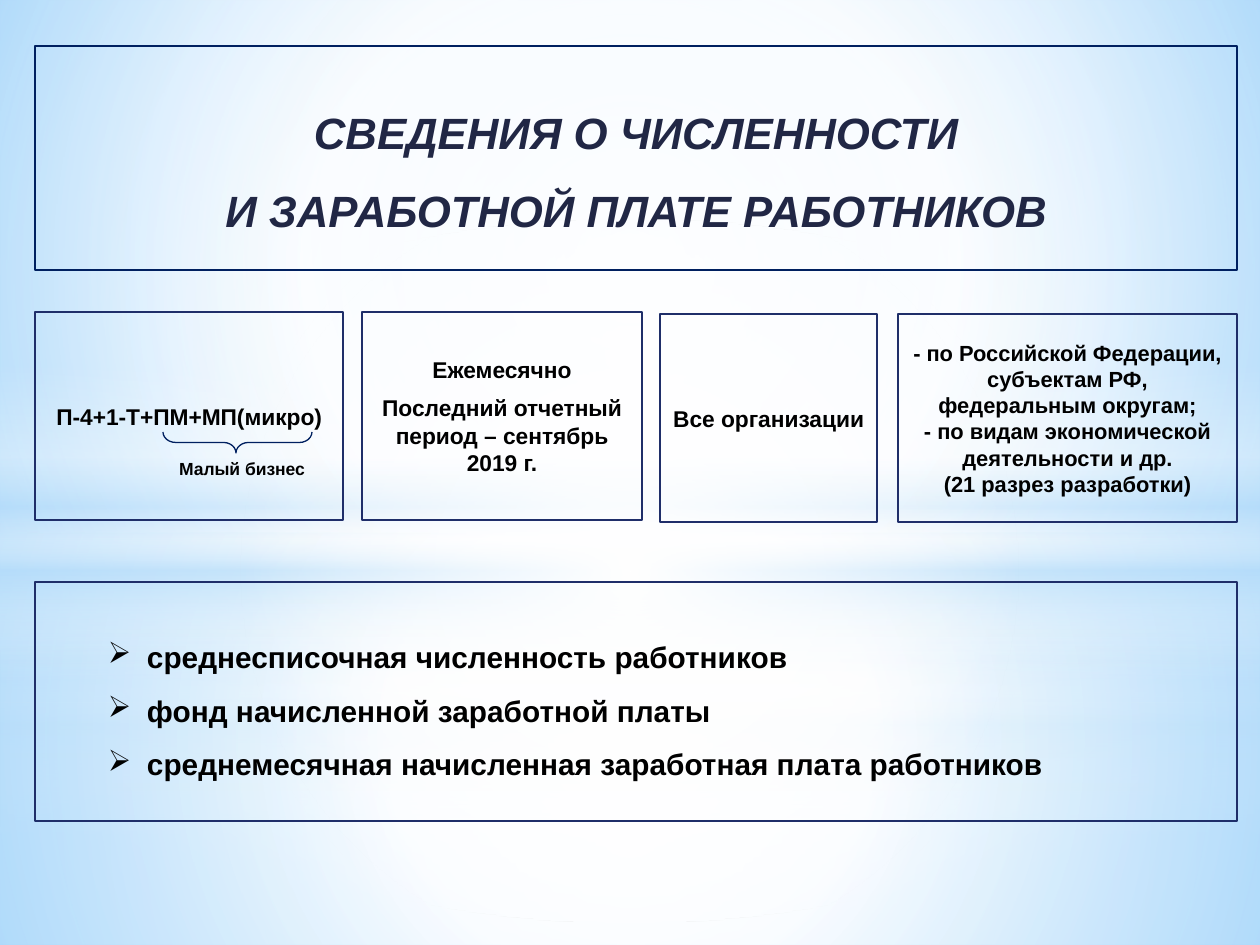
from lxml import etree
from pptx import Presentation
from pptx.dml.color import RGBColor
from pptx.enum.shapes import MSO_SHAPE
from pptx.enum.text import MSO_ANCHOR, MSO_AUTO_SIZE, PP_ALIGN
from pptx.oxml.ns import qn
from pptx.util import Emu, Pt

RECTANGLE, OVAL, BRACE = MSO_SHAPE.RECTANGLE, MSO_SHAPE.OVAL, MSO_SHAPE.RIGHT_BRACE
LEFT, CENTER = PP_ALIGN.LEFT, PP_ALIGN.CENTER
TOP, MIDDLE = MSO_ANCHOR.TOP, MSO_ANCHOR.MIDDLE

SCALE = 914400 // 126
FONT = "Arial"
WHITE, SKY, NAVY, INDIGO, BLACK = "FFFFFF", "B4DCFA", "002060", "1F2E69", "000000"
TITLE_COLOR = "212745"

# Gradient stops: position %, colour, opacity %
BACKGROUND = [(0, "9ED5FF", 100), (60, WHITE, 100), (100, "5BB9FF", 100)]
BAND = [(0, WHITE, 0), (29, WHITE, 30), (45, SKY, 40),
        (55, WHITE, 26), (65, SKY, 60), (100, WHITE, 0)]

# Light layers, drawn twice: floor and sky edge, band top, floor and sky
# opacities, extent of the central glow
LAYERS = [(703, 519, (91, 76, 79), (89, 62, 79), 56),
          (533, 365, (92, 77, 80), (90, 63, 80), 54)]

# Cards: left, top, width, text size, paragraphs
CARDS = [
    (35, 312, 308, 13, ["П-4+1-Т+ПМ+МП(микро)"]),
    (362, 312, 280, 13, ["Ежемесячно", "Последний отчетный период – сентябрь 2019 г."]),
    (660, 314, 217, 13, ["Все организации"]),
    (898, 314, 339, 12.5, [
        "- по Российской Федерации,\nсубъектам РФ, федеральным округам;\n"
        "- по видам экономической деятельности и др.",
        "(21 разрез разработки)"]),
]
INDICATORS = ["среднесписочная численность работников",
              "фонд начисленной заработной платы",
              "среднемесячная начисленная заработная плата работников"]


def px(value):
    return Emu(value * SCALE)


def color(value):
    return RGBColor.from_string(value)


def gradient(stops, focus=None):
    """Circular gradient around focus (l, t, r, b in %), or vertical without it."""
    fill = etree.Element(qn("a:gradFill"), rotWithShape="1")
    stop_list = etree.SubElement(fill, qn("a:gsLst"))
    for position, value, opacity in stops:
        stop = etree.SubElement(stop_list, qn("a:gs"), pos=str(position * 1000))
        tint = etree.SubElement(stop, qn("a:srgbClr"), val=value)
        if opacity < 100:
            etree.SubElement(tint, qn("a:alpha"), val=str(opacity * 1000))
    if focus:
        circle = etree.SubElement(fill, qn("a:path"), path="circle")
        sides = {side: str(share * 1000) for side, share in zip("ltrb", focus)}
        etree.SubElement(circle, qn("a:fillToRect"), **sides)
    else:
        etree.SubElement(fill, qn("a:lin"), ang="5400000", scaled="0")
    return fill


def set_background(slide):
    slide.background.fill.solid()
    properties = slide.element.xpath(".//p:bgPr")[0]
    properties.replace(properties[0], gradient(BACKGROUND, (20, 10, 20, 60)))


def add_layer(slide, kind, top, height, stops, focus=(50, 50, 50, 50)):
    shape = slide.shapes.add_shape(kind, 0, px(top), px(1260), px(height))
    shape.shadow.inherit = False
    shape.line.fill.background()
    shape.fill.solid()
    solid = shape.element.spPr.find(qn("a:solidFill"))
    shape.element.spPr.replace(solid, gradient(stops, focus))


def add_light(slide, edge, band_top, floor, sky, glow):
    tints = (WHITE, WHITE, SKY)
    add_layer(slide, RECTANGLE, edge, 945 - edge, list(zip((0, 37, 100), tints, floor)))
    add_layer(slide, RECTANGLE, 0, edge, list(zip((0, 48, 100), tints, sky)))
    add_layer(slide, RECTANGLE, band_top, 315, BAND, None)
    add_layer(slide, OVAL, 220, 703, [(0, WHITE, 100), (glow, WHITE, 0)])


def outline(shape, line_color, width=1.25):
    shape.fill.background()
    shape.line.color.rgb = color(line_color)
    shape.line.width = Pt(width)


def add_outlined(slide, kind, left, top, width, height, line_color=INDIGO, weight=1.25):
    shape = slide.shapes.add_shape(kind, px(left), px(top), px(width), px(height))
    shape.shadow.inherit = False
    outline(shape, line_color, weight)
    return shape


def write(shape, texts, size, text_color=BLACK, align=CENTER, anchor=MIDDLE,
          italic=False, spacing=1.0, gap=0):
    """Fill a shape with paragraphs; a newline in a text is a line break."""
    frame = shape.text_frame
    frame.word_wrap = True
    frame.auto_size = MSO_AUTO_SIZE.NONE
    frame.vertical_anchor = anchor
    frame.margin_left = frame.margin_right = px(12)
    frame.margin_top = frame.margin_bottom = px(6)
    for index, text in enumerate(texts):
        paragraph = frame.add_paragraph() if index else frame.paragraphs[0]
        paragraph.alignment = align
        paragraph.line_spacing = spacing
        paragraph.space_after = Pt(gap if index < len(texts) - 1 else 0)
        for number, line in enumerate(text.split("\n")):
            if number:
                paragraph.add_line_break()
            run = paragraph.add_run()
            run.text = line
            font = run.font
            font.name, font.size = FONT, Pt(size)
            font.bold, font.italic = True, italic
            font.color.rgb = color(text_color)
    return frame


def add_bullets(frame):
    for paragraph in frame.paragraphs:
        properties = paragraph._p.get_or_add_pPr()
        properties.set("marL", str(px(100)))
        properties.set("indent", str(px(-39)))
        etree.SubElement(properties, qn("a:buChar"), char="➢")


def add_title(slide):
    title = slide.shapes.title
    title.left, title.top, title.width, title.height = px(35), px(46), px(1202), px(224)
    outline(title, NAVY)
    frame = write(title, ["СВЕДЕНИЯ О ЧИСЛЕННОСТИ\nИ ЗАРАБОТНОЙ ПЛАТЕ РАБОТНИКОВ"],
                  25, TITLE_COLOR, italic=True, spacing=1.5)
    frame.paragraphs[0].space_before = Pt(5)
    # Bring the title in front of the light layers
    slide.shapes.element.append(title.element)


def main():
    presentation = Presentation()
    presentation.slide_width, presentation.slide_height = px(1260), px(945)
    slide = presentation.slides.add_slide(presentation.slide_layouts[5])

    # Backdrop
    set_background(slide)
    for layer in LAYERS:
        add_light(slide, *layer)

    add_title(slide)

    # Row of cards
    for left, top, width, size, texts in CARDS:
        card = add_outlined(slide, RECTANGLE, left, top, width, 208)
        write(card, texts, size, gap=6 if size == 13 else 0)

    # Indicators
    panel = add_outlined(slide, RECTANGLE, 35, 582, 1202, 239)
    add_bullets(write(panel, INDICATORS, 17, align=LEFT, spacing=1.5))

    # Small business note under the first card's forms
    label = slide.shapes.add_textbox(px(163), px(452), px(158), px(30))
    write(label, ["Малый бизнес"], 10, anchor=TOP)
    brace = add_outlined(slide, BRACE, 227, 368, 21, 149, NAVY, 0.75)
    brace.rotation = 90
    brace.adjustments[0], brace.adjustments[1] = 0.6, 0.51

    presentation.save("out.pptx")


if __name__ == "__main__":
    main()
